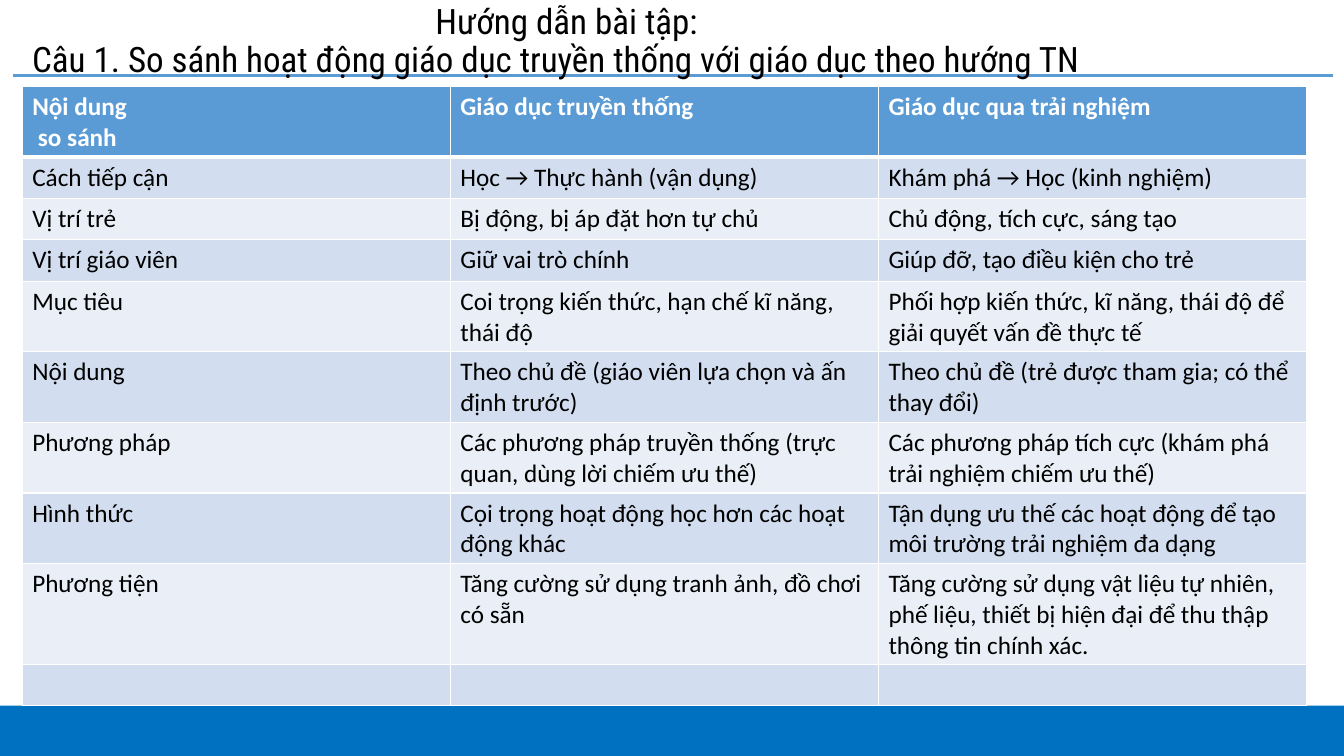
import pptx
import pptx.dml.color
import pptx.enum.shapes
import pptx.enum.text
import pptx.oxml.ns
import pptx.util
from lxml import etree

TITLE_LINES = [
    # text, left indent in inches
    ("Hướng dẫn bài tập:", 4),
    ("Câu 1. So sánh hoạt động giáo dục truyền thống với giáo dục theo hướng TN", 0),
]
COMPARISON = [
    ("Nội dung\n so sánh", "Giáo dục truyền thống", "Giáo dục qua trải nghiệm"),
    ("Cách tiếp cận", "Học → Thực hành (vận dụng)", "Khám phá → Học (kinh nghiệm)"),
    ("Vị trí trẻ", "Bị động, bị áp đặt hơn tự chủ", "Chủ động, tích cực, sáng tạo"),
    ("Vị trí giáo viên", "Giữ vai trò chính", "Giúp đỡ, tạo điều kiện cho trẻ"),
    ("Mục tiêu", "Coi trọng kiến thức, hạn chế kĩ năng, thái độ",
     "Phối hợp kiến thức, kĩ năng, thái độ để giải quyết vấn đề thực tế"),
    ("Nội dung", "Theo chủ đề (giáo viên lựa chọn và ấn định trước)",
     "Theo chủ đề (trẻ được tham gia; có thể thay đổi)"),
    ("Phương pháp", "Các phương pháp truyền thống (trực quan, dùng lời chiếm ưu thế)",
     "Các phương pháp tích cực (khám phá trải nghiệm chiếm ưu thế)"),
    ("Hình thức", "Cọi trọng hoạt động học hơn các hoạt động khác",
     "Tận dụng ưu thế các hoạt động để tạo môi trường trải nghiệm đa dạng"),
    ("Phương tiện", "Tăng cường sử dụng tranh ảnh, đồ chơi có sẵn",
     "Tăng cường sử dụng vật liệu tự nhiên, phế liệu, thiết bị hiện đại để thu thập "
     "thông tin chính xác."),
    ("", "", ""),
]
COLORS = {
    "footer": "0070C0",
    "accent": "5B9BD5",
    "odd_row": "D2DEEF",
    "even_row": "EAEFF7",
    "text": "000000",
    "white": "FFFFFF",
}
SLIDE_WIDTH, SLIDE_HEIGHT = 13.33, 7.5
MARGIN = 0.22
RULE_Y = 0.75
FOOTER_HEIGHT = 0.5
FOOTER_BLEED = 0.05
TABLE_TOP, TABLE_WIDTH, ROW_HEIGHT = 0.86, 12.74, 0.41

inches = pptx.util.Inches


def color(name):
    return pptx.dml.color.RGBColor.from_string(COLORS[name])


def style_run(run, font_name, size, color_name, bold=False):
    run.font.name = font_name
    run.font.size = pptx.util.Pt(size)
    run.font.bold = bold
    run.font.color.rgb = color(color_name)


def add_footer(slide):
    band = slide.shapes.add_shape(
        pptx.enum.shapes.MSO_SHAPE.RECTANGLE,
        inches(-FOOTER_BLEED), inches(SLIDE_HEIGHT - FOOTER_HEIGHT),
        inches(SLIDE_WIDTH + 2 * FOOTER_BLEED), inches(FOOTER_HEIGHT))
    band.shadow.inherit = False
    band.fill.solid()
    band.fill.fore_color.rgb = color("footer")
    band.line.fill.background()


def add_rule(slide):
    rule = slide.shapes.add_connector(
        pptx.enum.shapes.MSO_CONNECTOR.STRAIGHT,
        inches(0.13), inches(RULE_Y), inches(13.22), inches(RULE_Y))
    rule.line.color.rgb = color("accent")
    rule.line.width = pptx.util.Pt(2)
    etree.SubElement(rule._element.spPr, pptx.oxml.ns.qn("a:effectLst"))


def add_title(slide):
    box = slide.shapes.add_textbox(
        inches(MARGIN), inches(0.08), inches(SLIDE_WIDTH - 2 * MARGIN), inches(0.67))
    frame = box.text_frame
    frame.word_wrap = True
    frame.vertical_anchor = pptx.enum.text.MSO_ANCHOR.MIDDLE
    frame.text = "\n".join(text for text, indent in TITLE_LINES)
    for paragraph, (text, indent) in zip(frame.paragraphs, TITLE_LINES):
        paragraph.line_spacing = 0.9
        paragraph._p.get_or_add_pPr().set("marL", str(inches(indent)))
        style_run(paragraph.runs[0], "Roboto Condensed", 25, "text")


def set_borders(cell, widths):
    """Draw white borders; widths maps left, top, right and bottom tags to points."""
    properties = cell._tc.get_or_add_tcPr()
    for tag, width in widths.items():
        line = etree.SubElement(properties, pptx.oxml.ns.qn(f"a:{tag}"),
                                w=str(pptx.util.Pt(width)))
        fill = etree.SubElement(line, pptx.oxml.ns.qn("a:solidFill"))
        etree.SubElement(fill, pptx.oxml.ns.qn("a:srgbClr"), val=COLORS["white"])


def add_comparison(slide):
    row_count, column_count = len(COMPARISON), len(COMPARISON[0])
    table = slide.shapes.add_table(
        row_count, column_count, inches(MARGIN), inches(TABLE_TOP),
        inches(TABLE_WIDTH), inches(ROW_HEIGHT * row_count)).table
    for row_index, texts in enumerate(COMPARISON):
        is_header = row_index == 0
        if is_header:
            fill_name = "accent"
        else:
            fill_name = "odd_row" if row_index % 2 else "even_row"
        widths = {"lnL": 1, "lnR": 1, "lnT": 3 if row_index == 1 else 1,
                  "lnB": 3 if is_header else 1}
        for column_index, text in enumerate(texts):
            cell = table.cell(row_index, column_index)
            set_borders(cell, widths)
            cell.fill.solid()
            cell.fill.fore_color.rgb = color(fill_name)
            cell.text_frame.text = text
            for paragraph in cell.text_frame.paragraphs:
                for run in paragraph.runs:
                    style_run(run, "Calibri", 18, "white" if is_header else "text", is_header)


def main():
    presentation = pptx.Presentation()
    presentation.slide_width = inches(SLIDE_WIDTH)
    presentation.slide_height = inches(SLIDE_HEIGHT)
    slide = presentation.slides.add_slide(presentation.slide_layouts[6])
    add_footer(slide)
    add_rule(slide)
    add_title(slide)
    add_comparison(slide)
    presentation.save("out.pptx")


if __name__ == "__main__":
    main()
